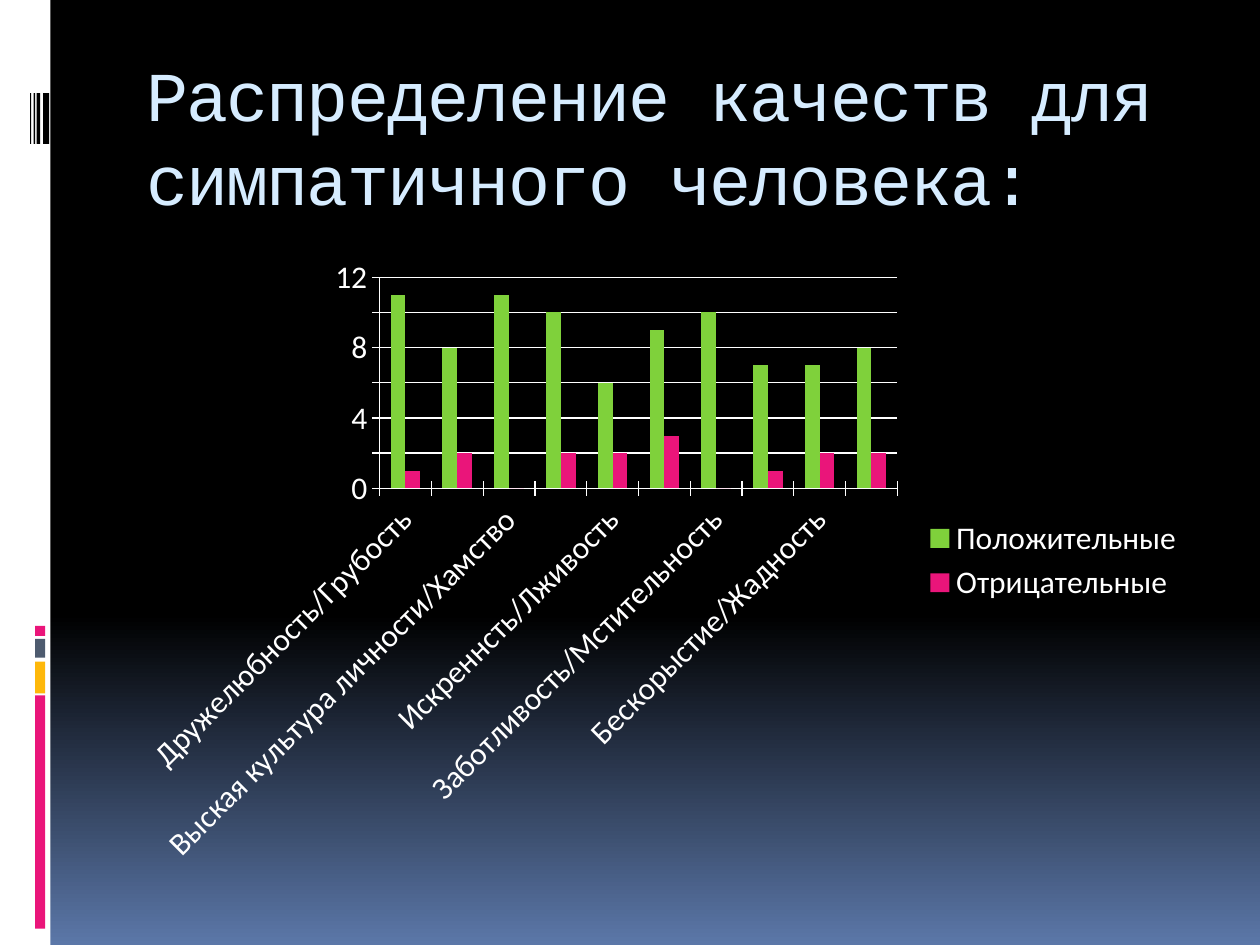
from dataclasses import dataclass

from pptx import Presentation
from pptx.chart.data import CategoryChartData
from pptx.dml.color import RGBColor
from pptx.enum.chart import XL_CHART_TYPE, XL_LEGEND_POSITION, XL_TICK_MARK
from pptx.enum.shapes import MSO_SHAPE
from pptx.enum.text import MSO_ANCHOR, MSO_AUTO_SIZE, PP_ALIGN
from pptx.util import Cm, Pt

RECT = MSO_SHAPE.RECTANGLE
CLUSTERED = XL_CHART_TYPE.COLUMN_CLUSTERED
LEGEND_RIGHT = XL_LEGEND_POSITION.RIGHT
CROSS = XL_TICK_MARK.CROSS
TOP = MSO_ANCHOR.TOP
NO_AUTOFIT = MSO_AUTO_SIZE.NONE
LEFT = PP_ALIGN.LEFT
TITLE_ONLY = 5


@dataclass(frozen=True)
class Theme:
    black: str = "000000"
    white: str = "FFFFFF"
    blue: str = "5B77A8"
    title: str = "D6ECFF"
    pink: str = "EA157A"
    amber: str = "FEB80A"
    slate: str = "4E5B6F"
    green: str = "7FD13B"
    title_font: str = "Courier New"
    chart_font: str = "Calibri"
    title_size: int = 40
    chart_size: int = 18


THEME = Theme()

# top and height in cm
ACCENTS = [
    (14.02, 4.70, THEME.pink),
    (13.34, 0.64, THEME.amber),
    (12.88, 0.38, THEME.slate),
    (12.62, 0.20, THEME.pink),
]
# left and width in cm
BARCODE = [(0.87, 0.12), (0.74, 0.07), (0.68, 0.03), (0.61, 0.02)]

QUALITIES = [
    "Дружелюбность/Грубость",
    "Доброта/Лицемерие",
    "Выская культура личности/Хамство",
    "Уверенность в себе/Чрезмерный эгоизм",
    "Искреннсть/Лживость",
    "Рассудительство/Заносчивость",
    "Заботливость/Мстительность",
    "Осторожность/Агрессивность",
    "Бескорыстие/Жадность",
    "Эмпатия/Бесчувстенность",
]
SERIES = [
    ("Положительные", [11, 8, 11, 10, 6, 9, 10, 7, 7, 8], THEME.green),
    ("Отрицательные", [1, 2, 0, 2, 2, 3, 0, 1, 2, 2], THEME.pink),
]


def rgb(color):
    return RGBColor.from_string(color)


def set_background(slide):
    fill = slide.background.fill
    fill.gradient()
    fill.gradient_angle = 270
    stops = [(0.65, THEME.black), (1, THEME.blue)]
    for stop, (position, color) in zip(fill.gradient_stops, stops):
        stop.position = position
        stop.color.rgb = rgb(color)


def add_rect(slide, left, top, width, height, color):
    sp = slide.shapes.add_shape(RECT, Cm(left), Cm(top), Cm(width), Cm(height))
    sp.shadow.inherit = False
    sp.fill.solid()
    sp.fill.fore_color.rgb = rgb(color)
    sp.line.fill.background()


def add_side_strip(slide):
    add_rect(slide, 0, 0, 1.02, 19.05, THEME.white)
    for top, height, color in ACCENTS:
        add_rect(slide, 0.71, top, 0.2, height, color)
    for left, width in BARCODE:
        add_rect(slide, left, 1.88, width, 1.02, THEME.black)


def write_text(tf, text, *, font, size, color, tracking=0, line_height=None):
    """Tracking is in points, as is line_height."""
    p = tf.paragraphs[0]
    p.alignment = LEFT
    if line_height:
        p.line_spacing = Pt(line_height)
    r = p.add_run()
    r.text = text
    r.font.name = font
    r.font.size = Pt(size)
    r.font.color.rgb = rgb(color)
    r.font._element.set("spc", str(tracking * 100))


def add_title(slide, text):
    sp = slide.shapes.title
    sp.left, sp.top, sp.width, sp.height = Cm(2.69), Cm(0.74), Cm(21.59), Cm(2.54)
    tf = sp.text_frame
    tf.word_wrap = True
    tf.auto_size = NO_AUTOFIT
    tf.vertical_anchor = TOP
    tf.margin_top = Cm(0.3)
    write_text(tf, text, font=THEME.title_font, size=THEME.title_size,
               color=THEME.title, tracking=-1, line_height=48)


def style_line(line):
    line.color.rgb = rgb(THEME.white)
    line.width = Pt(0.75)


def add_qualities_chart(slide):
    data = CategoryChartData()
    data.categories = QUALITIES
    for name, values, _ in SERIES:
        data.add_series(name, values)
    frame = slide.shapes.add_chart(
        CLUSTERED, Cm(2.54), Cm(4.95), Cm(21.59), Cm(12.7), data)
    chart = frame.chart
    chart.has_title = False
    chart.font.name = THEME.chart_font
    chart.font.size = Pt(THEME.chart_size)
    chart.font.color.rgb = rgb(THEME.white)

    chart.has_legend = True
    chart.legend.position = LEGEND_RIGHT
    chart.legend.include_in_layout = False

    for axis in (chart.category_axis, chart.value_axis):
        axis.major_tick_mark = CROSS
        style_line(axis.format.line)
    values = chart.value_axis
    values.minimum_scale, values.maximum_scale, values.major_unit = 0, 12, 2
    style_line(values.major_gridlines.format.line)

    plot = chart.plots[0]
    plot.gap_width = 150
    plot.vary_by_categories = False
    for series, (_, _, color) in zip(plot.series, SERIES):
        series.format.fill.solid()
        series.format.fill.fore_color.rgb = rgb(color)


def main():
    prs = Presentation()
    prs.slide_width, prs.slide_height = Cm(25.4), Cm(19.05)
    slide = prs.slides.add_slide(prs.slide_layouts[TITLE_ONLY])
    set_background(slide)
    add_side_strip(slide)
    add_title(slide, "Распределение качеств для симпатичного человека:")
    add_qualities_chart(slide)
    prs.save("out.pptx")


if __name__ == "__main__":
    main()
